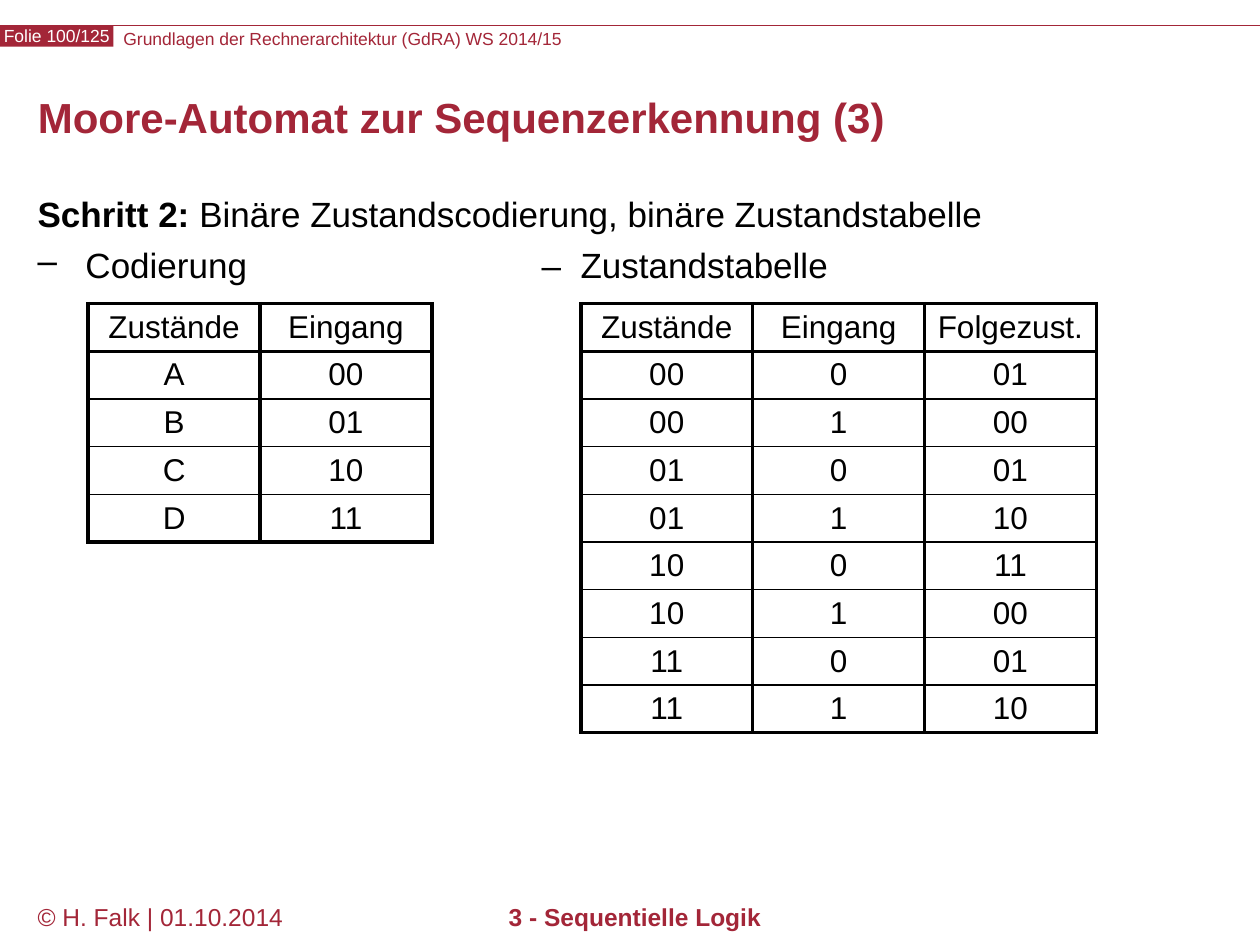
"""Build the slide on binary state coding of a Moore automaton."""
from dataclasses import dataclass

from lxml import etree
from pptx import Presentation, util as u
from pptx.dml.color import RGBColor
from pptx.enum import shapes, text
from pptx.oxml import ns

COLUMNS, ROWS = 100, 75
SLIDE_WIDTH, SLIDE_HEIGHT = u.Inches(10), u.Inches(7.5)


@dataclass(frozen=True)
class Theme:
    """Colours, font and type sizes of the slide."""
    accent: RGBColor = RGBColor(0xA3, 0x26, 0x38)
    ink: RGBColor = RGBColor(0, 0, 0)
    paper: RGBColor = RGBColor(255, 255, 255)
    font: str = "Arial"
    title: int = 24
    body: int = 20
    cell: int = 18
    footer: int = 14
    header: int = 10
    thick: float = 2.25
    thin: float = 1


THEME = Theme()
CODING = [("Zustände", "Eingang"),
          ("A", "00"), ("B", "01"), ("C", "10"), ("D", "11")]
TRANSITIONS = [("Zustände", "Eingang", "Folgezust."),
               ("00", "0", "01"), ("00", "1", "00"),
               ("01", "0", "01"), ("01", "1", "10"),
               ("10", "0", "11"), ("10", "1", "00"),
               ("11", "0", "01"), ("11", "1", "10")]


def grid(column, row, width, height):
    """Turn grid columns and rows into slide lengths."""
    return (round(column * SLIDE_WIDTH / COLUMNS), round(row * SLIDE_HEIGHT / ROWS),
            round(width * SLIDE_WIDTH / COLUMNS), round(height * SLIDE_HEIGHT / ROWS))


def style(para, size, color, bold=False, align=text.PP_ALIGN.LEFT):
    """Format a paragraph and all its runs."""
    para.alignment = align
    for span in para.runs:
        span.font.name = THEME.font
        span.font.size = u.Pt(size)
        span.font.bold = bold
        span.font.color.rgb = color


def set_margins(frame, margin):
    """Give a text frame equal margins on every side."""
    frame.margin_left = frame.margin_right = margin
    frame.margin_top = frame.margin_bottom = margin


def add_label(page, place, words, size, **look):
    """Add a one-line text box in the accent colour."""
    frame = page.shapes.add_textbox(*grid(*place)).text_frame
    frame.word_wrap = True
    frame.text = words
    style(frame.paragraphs[0], size, THEME.accent, **look)
    return frame


def add_header(page):
    """Add the top rule, the course name and the page tag."""
    left, top, width, _ = grid(0, 2, COLUMNS, 0)
    rule = page.shapes.add_connector(shapes.MSO_CONNECTOR.STRAIGHT, left, top, width, top)
    rule.line.color.rgb = THEME.accent
    rule.line.width = u.Pt(0.75)
    etree.SubElement(rule._element.spPr, ns.qn("a:effectLst"))
    course = add_label(page, (9.8, 2.2, 66, 1.7),
                       "Grundlagen der Rechnerarchitektur (GdRA) WS 2014/15", THEME.header)
    set_margins(course, 0)
    tag = page.shapes.add_shape(shapes.MSO_SHAPE.RECTANGLE, *grid(0, 2, 9, 1.7))
    tag.shadow.inherit = False
    tag.fill.solid()
    tag.fill.fore_color.rgb = THEME.accent
    tag.line.fill.background()
    frame = tag.text_frame
    set_margins(frame, 0)
    frame.word_wrap = False
    frame.vertical_anchor = text.MSO_ANCHOR.MIDDLE
    frame.text = "Folie 100/125"
    style(frame.paragraphs[0], THEME.header, THEME.paper, align=text.PP_ALIGN.CENTER)


def set_title(page, words):
    """Move, fill and format the title placeholder."""
    title = page.shapes.title
    title.left, title.top, title.width, title.height = grid(2, 6, 96.1, 7.2)
    frame = title.text_frame
    frame.text = words
    frame.auto_size = text.MSO_AUTO_SIZE.NONE
    frame.vertical_anchor = text.MSO_ANCHOR.MIDDLE
    para = frame.paragraphs[0]
    para.line_spacing = u.Pt(THEME.title)
    style(para, THEME.title, THEME.accent, bold=True)


def add_body(page):
    """Add the step line and the bulleted table headings."""
    frame = page.shapes.add_textbox(*grid(2, 15.2, 96.1, 54.6)).text_frame
    frame.word_wrap = True
    frame.text = "Schritt 2:"
    step = frame.paragraphs[0]
    step.add_run().text = " Binäre Zustandscodierung, binäre Zustandstabelle"
    headings = frame.add_paragraph()
    headings.text = "Codierung\t\t\t–  Zustandstabelle"
    for para, spacing in ((step, 0.9), (headings, 1.2)):
        properties = para._p.get_or_add_pPr()
        properties.set("marL", str(u.Inches(0.38)))
        properties.set("indent", str(u.Inches(-0.38)))
        properties.set("defTabSz", str(u.Inches(1)))
        para.line_spacing = spacing
        style(para, THEME.body, THEME.ink)
    step.runs[0].font.bold = True
    etree.SubElement(headings._p.pPr, ns.qn("a:buChar"), char="–")


def add_border(cell, side, width):
    """Draw one side of a table cell."""
    line = etree.SubElement(cell._tc.get_or_add_tcPr(), ns.qn(f"a:ln{side}"),
                            w=str(u.Pt(width)))
    fill = etree.SubElement(line, ns.qn("a:solidFill"))
    etree.SubElement(fill, ns.qn("a:srgbClr"), val=str(THEME.ink))


def add_state_table(page, column, row, records):
    """Add a table with a framed header and thin rules between records."""
    width, height = 13.64, 3.78
    place = grid(column, row, width * len(records[0]), height * len(records))
    table = page.shapes.add_table(len(records), len(records[0]), *place).table
    table.first_row = table.horz_banding = False
    last = len(records) - 1
    for index, record in enumerate(records):
        top = THEME.thick if index <= 1 else THEME.thin
        bottom = THEME.thick if index in (0, last) else THEME.thin
        for position, words in enumerate(record):
            cell = table.cell(index, position)
            for side, weight in zip("LRTB", (THEME.thick, THEME.thick, top, bottom)):
                add_border(cell, side, weight)
            cell.fill.background()
            cell.vertical_anchor = text.MSO_ANCHOR.MIDDLE
            cell.text_frame.text = words
            para = cell.text_frame.paragraphs[0]
            para.line_spacing = u.Pt(20)
            style(para, THEME.cell, THEME.ink, align=text.PP_ALIGN.CENTER)


def main():
    """Build and save the deck."""
    deck = Presentation()
    deck.slide_width, deck.slide_height = SLIDE_WIDTH, SLIDE_HEIGHT
    page = deck.slides.add_slide(deck.slide_layouts.get_by_name("Title Only"))
    add_header(page)
    add_label(page, (2, 71.1, 22, 3.9), "© H. Falk | 01.10.2014", THEME.footer)
    add_label(page, (20.1, 71.1, 60.6, 3.9), "3 - Sequentielle Logik", THEME.footer,
              bold=True, align=text.PP_ALIGN.CENTER)
    set_title(page, "Moore-Automat zur Sequenzerkennung (3)")
    add_body(page)
    add_state_table(page, 7, 24.1, CODING)
    add_state_table(page, 46.1, 24.1, TRANSITIONS)
    deck.save("out.pptx")


if __name__ == "__main__":
    main()
